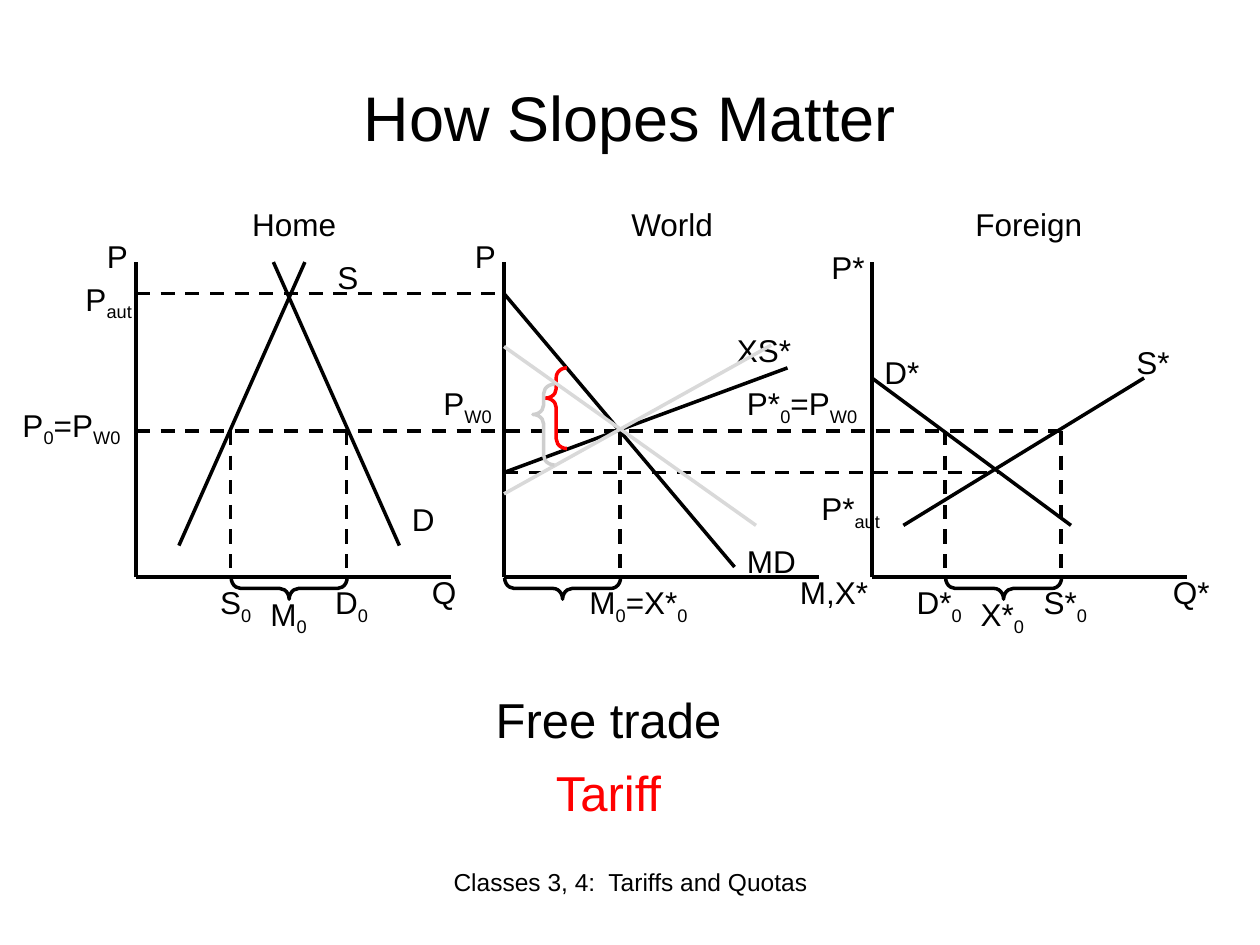
from collections import namedtuple

from lxml.etree import SubElement
from pptx import Presentation
from pptx.dml.color import RGBColor
from pptx.enum.dml import MSO_LINE
from pptx.enum.shapes import MSO_CONNECTOR, MSO_SHAPE
from pptx.enum.text import MSO_ANCHOR, MSO_AUTO_SIZE, PP_ALIGN
from pptx.oxml.ns import qn
from pptx.util import Inches, Pt

BLACK = RGBColor(0x00, 0x00, 0x00)
RED = RGBColor(0xFF, 0x00, 0x00)
PALE = RGBColor(0xD9, 0xD9, 0xD9)
GREY = RGBColor(0xCE, 0xCE, 0xCE)
FONT = "Arial"

Box = namedtuple("Box", "left top width height")

# Heights inside a panel, measured down from its top
AUT, PRICE, LOW = 0.25, 1.34, 1.67


def write(frame, text, size=18, color=BLACK, align=PP_ALIGN.LEFT):
    """Fill a text frame; every second part between bars is a subscript."""
    para = frame.paragraphs[0]
    para.alignment = align
    for i, part in enumerate(text.split("|")):
        if not part:
            continue
        run = para.add_run()
        run.text = part
        run.font.name = FONT
        run.font.size = Pt(size)
        run.font.color.rgb = color
        if i % 2:
            run.font._element.set("baseline", "-25000")


def label(slide, box, x, y, text, width=0.75, height=0.4, **style):
    shape = slide.shapes.add_textbox(Inches(box.left + x), Inches(box.top + y),
                                     Inches(width), Inches(height))
    frame = shape.text_frame
    frame.word_wrap = True
    frame.auto_size = MSO_AUTO_SIZE.SHAPE_TO_FIT_TEXT
    write(frame, text, **style)


def line(slide, box, start, end, color=BLACK, dash=False):
    ends = [Inches(box[i] + point[i]) for point in (start, end) for i in (0, 1)]
    part = slide.shapes.add_connector(MSO_CONNECTOR.STRAIGHT, *ends)
    part.line.color.rgb = color
    part.line.width = Pt(2)
    if dash:
        part.line.dash_style = MSO_LINE.DASH
    SubElement(part._element.spPr, qn("a:effectLst"))


def brace(slide, box, x, y, height, color=BLACK, turn=0, tip=0.5):
    shape = slide.shapes.add_shape(MSO_SHAPE.LEFT_BRACE, Inches(box.left + x),
                                   Inches(box.top + y), Inches(0.17), Inches(height))
    shape.adjustments[0] = 0.444
    shape.adjustments[1] = tip
    shape.rotation = turn
    shape.shadow.inherit = False
    shape.fill.background()
    shape.line.color.rgb = color
    shape.line.width = Pt(2)
    return shape


def span(slide, box, start, end):
    """Brace lying under the quantity axis."""
    brace(slide, box, (start + end) / 2 - 0.08, box.height - 0.37, end - start, turn=270)


def axes(slide, box, name, name_x):
    corner = (0, box.height)
    line(slide, box, corner, (box.width, box.height))
    line(slide, box, corner, (0, 0))
    label(slide, box, name_x, -0.5, name, width=1.17, align=PP_ALIGN.CENTER)


def drop(slide, box, *places):
    """Dashed lines from the world price down to the quantity axis."""
    for x in places:
        line(slide, box, (x, PRICE), (x, box.height), dash=True)


def home(slide, box):
    axes(slide, box, "Home", 0.67)
    line(slide, box, (0.34, 2.25), (1.34, 0))
    line(slide, box, (2.09, 2.25), (1.09, 0))
    drop(slide, box, 0.75, 1.67)
    span(slide, box, 0.75, 1.67)
    for x, y, text in [(-0.33, -0.25, "P"), (-0.5, 0.09, "P|aut|"), (1.5, -0.08, "S"),
                       (2.09, 1.84, "D"), (2.25, 2.42, "Q")]:
        label(slide, box, x, y, text)
    label(slide, box, -1, 1.09, "P|0|=P|W0|", width=1.25)
    for x, y, text in [(0.5, 2.5, "S|0|"), (0.92, 2.59, "M|0|"), (1.42, 2.5, "D|0|")]:
        label(slide, box, x, y, text, width=0.58, align=PP_ALIGN.CENTER)


def world(slide, box):
    axes(slide, box, "World", 0.75)
    line(slide, box, (1.83, 2.42), (0, AUT))
    line(slide, box, (0, LOW), (2.25, 0.84))
    drop(slide, box, 0.92)
    span(slide, box, 0, 0.92)
    for x, y, text in [(-0.33, -0.25, "P"), (-0.58, 0.92, "P|W0|"), (1.83, 2.17, "MD"),
                       (1.75, 0.5, "XS*"), (2.25, 2.42, "M,X*")]:
        label(slide, box, x, y, text)
    label(slide, box, 0.58, 2.5, "M|0|=X*|0|", width=1)
    # Tariff wedge, then the other slopes with theirs
    wedge(slide, box, 0.33, 0.84, RED)
    line(slide, box, (2, 2.09), (0, 0.67), color=PALE)
    line(slide, box, (0, 1.84), (2.12, 0.66), color=PALE)
    wedge(slide, box, 0.23, 0.97, GREY)


def wedge(slide, box, x, y, color):
    shape = brace(slide, box, x, y, 0.64, color=color, tip=0.625)
    shape._element.spPr.xfrm.set("flipV", "1")


def foreign(slide, box):
    axes(slide, box, "Foreign", 0.66)
    line(slide, box, (0.25, 2.09), (2.16, 0.92))
    line(slide, box, (1.58, 2.09), (0, 0.92))
    drop(slide, box, 0.58, 1.5)
    span(slide, box, 0.58, 1.5)
    for x, y, text in [(-0.42, -0.16, "P*"), (-0.5, 1.75, "P*|aut|"), (0, 0.67, "D*"),
                       (2, 0.59, "S*"), (2.29, 2.42, "Q*")]:
        label(slide, box, x, y, text)
    label(slide, box, -1.09, 0.92, "P*|0|=P|W0|", width=1.25)
    for x, y, text in [(0.16, 2.5, "D*|0|"), (0.66, 2.59, "X*|0|"), (1.16, 2.5, "S*|0|")]:
        label(slide, box, x, y, text, align=PP_ALIGN.CENTER)


def prices(slide, box, step):
    """Dashed price lines that run across the panels."""
    line(slide, box, (0, AUT), (step, AUT), dash=True)
    line(slide, box, (0, PRICE), (2 * step + 1.5, PRICE), dash=True)
    line(slide, box, (step, LOW), (2 * step + 1, LOW), dash=True)


def heading(slide, box, text):
    title = slide.shapes.title
    title.left, title.top, title.width, title.height = map(Inches, box)
    title.text_frame.vertical_anchor = MSO_ANCHOR.MIDDLE
    write(title.text_frame, text, size=36, align=PP_ALIGN.CENTER)


def captions(slide, box):
    style = dict(width=box.width, align=PP_ALIGN.CENTER)
    label(slide, box, 0, 0, "Free trade", size=28, height=0.57, **style)
    label(slide, box, 0, 0.58, "Tariff", size=28, height=0.57, color=RED, **style)


def footer(slide, box):
    label(slide, box, 0, 0, "Classes 3, 4:  Tariffs and Quotas", size=14,
          width=box.width, height=box.height, align=PP_ALIGN.CENTER)


def main():
    deck = Presentation()
    deck.slide_width, deck.slide_height = Inches(10), Inches(7.5)
    slide = deck.slides.add_slide(deck.slide_layouts[5])
    heading(slide, Box(0.5, 0.3, 9, 1.25), "How Slopes Matter")

    # Three equal panels
    first, step = Box(1.08, 2.08, 2.5, 2.5), 2.92
    prices(slide, first, step)
    for i, panel in enumerate((home, world, foreign)):
        panel(slide, first._replace(left=first.left + i * step))

    captions(slide, Box(3.83, 5.42, 2, 1.15))
    footer(slide, Box(3.42, 6.83, 3.17, 0.52))
    deck.save("out.pptx")


if __name__ == "__main__":
    main()
